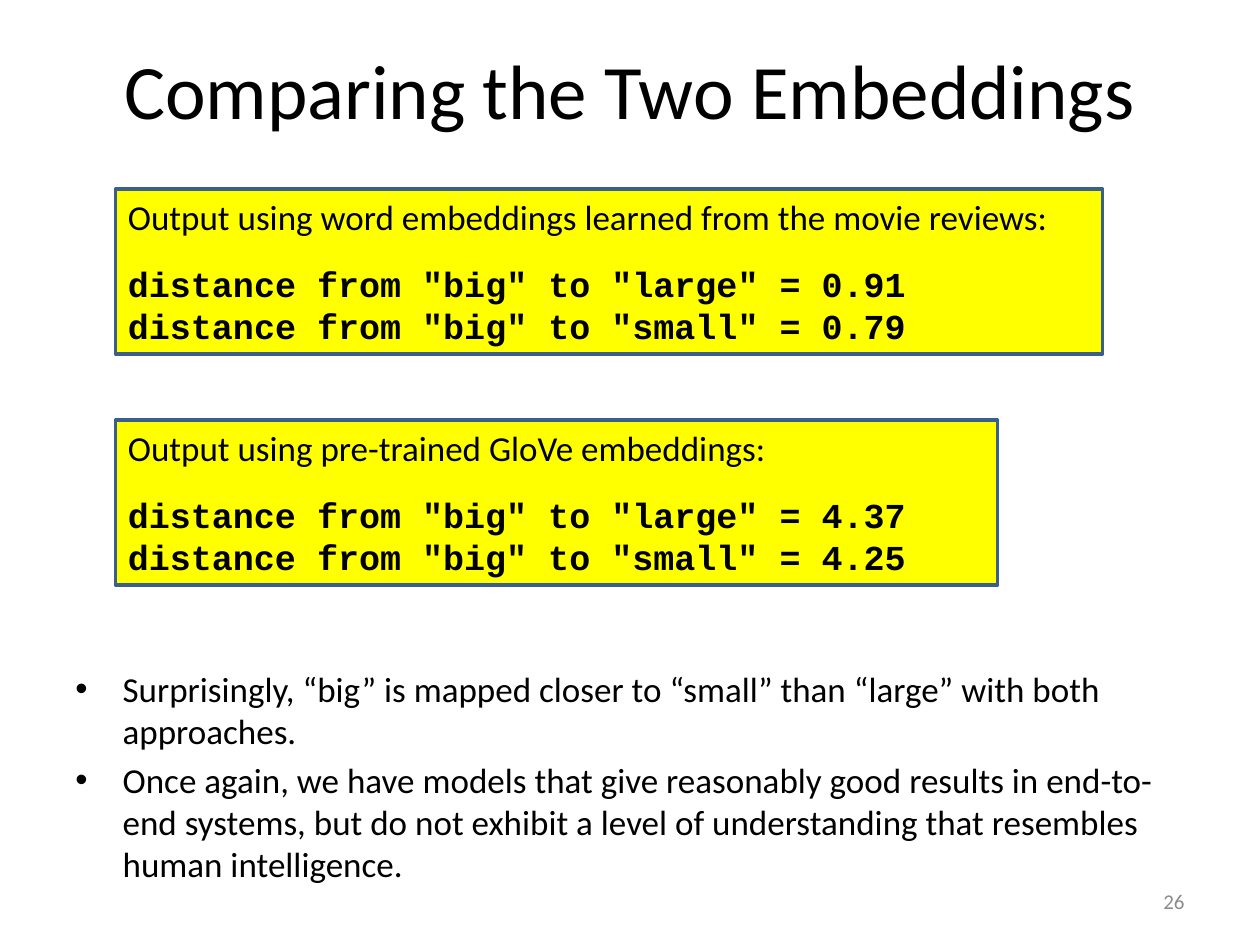
from dataclasses import dataclass

from lxml import etree
from pptx import Presentation
from pptx.dml.color import RGBColor
from pptx.enum.shapes import MSO_SHAPE
from pptx.enum.text import MSO_ANCHOR, MSO_AUTO_SIZE, PP_ALIGN
from pptx.oxml.ns import qn
from pptx.util import Pt

RECTANGLE = MSO_SHAPE.RECTANGLE
TOP, MIDDLE = MSO_ANCHOR.TOP, MSO_ANCHOR.MIDDLE
LEFT, CENTER, RIGHT = PP_ALIGN.LEFT, PP_ALIGN.CENTER, PP_ALIGN.RIGHT
GROW = MSO_AUTO_SIZE.SHAPE_TO_FIT_TEXT


@dataclass(frozen=True)
class Theme:
    sans: str = "Calibri"
    mono: str = "Courier New"
    text: RGBColor = RGBColor(0x00, 0x00, 0x00)
    muted: RGBColor = RGBColor(0x8C, 0x8C, 0x8C)
    panel: RGBColor = RGBColor(0xFF, 0xFF, 0x00)
    border: RGBColor = RGBColor(0x3A, 0x5F, 0x8C)
    title_size: float = 44
    body_size: float = 20
    number_size: float = 12


@dataclass(frozen=True)
class Box:
    left: float
    top: float
    width: float
    height: float

    def lengths(self):
        return Pt(self.left), Pt(self.top), Pt(self.width), Pt(self.height)


@dataclass(frozen=True)
class OutputPanel:
    box: Box
    heading: str
    distances: dict[str, str]


THEME = Theme()
HEADING_GAP = 14.65
BULLET_INDENT = 27

PANELS = [
    OutputPanel(Box(66, 108, 564, 94.3),
                "Output using word embeddings learned from the movie reviews:",
                {"large": "0.91", "small": "0.79"}),
    OutputPanel(Box(66, 240, 504, 94.3),
                "Output using pre-trained GloVe embeddings:",
                {"large": "4.37", "small": "4.25"}),
]

FINDINGS = [
    "Surprisingly, “big” is mapped closer to “small” than “large” with both approaches.",
    "Once again, we have models that give reasonably good results in end-to-end systems, "
    "but do not exhibit a level of understanding that resembles human intelligence.",
]


def write_lines(tf, lines: list[str], size: float, color=THEME.text, align=LEFT):
    """Fill a text frame, one paragraph a line, and return the paragraphs."""
    tf.word_wrap = True
    for i, line in enumerate(lines):
        p = tf.paragraphs[0] if i == 0 else tf.add_paragraph()
        p.text = line
        p.alignment = align
        p.font.name = THEME.sans
        p.font.size = Pt(size)
        p.font.color.rgb = color
    return tf.paragraphs


def add_text(s, box: Box, lines: list[str], size: float, anchor=MIDDLE, **style):
    tf = s.shapes.add_textbox(*box.lengths()).text_frame
    tf.vertical_anchor = anchor
    return write_lines(tf, lines, size, **style)


def add_bullet(p) -> None:
    p.space_before = Pt(THEME.body_size * 0.2)
    pPr = p._p.get_or_add_pPr()
    pPr.set("marL", str(Pt(BULLET_INDENT)))
    pPr.set("indent", str(-Pt(BULLET_INDENT)))
    font = etree.Element(qn("a:buFont"), typeface="Arial")
    char = etree.Element(qn("a:buChar"), char="•")
    # Bullet settings come before the default run properties
    defaults = pPr.find(qn("a:defRPr"))
    defaults.addprevious(font)
    defaults.addprevious(char)


def add_panel(s, panel: OutputPanel) -> None:
    sp = s.shapes.add_shape(RECTANGLE, *panel.box.lengths())
    sp.shadow.inherit = False
    sp.fill.solid()
    sp.fill.fore_color.rgb = THEME.panel
    sp.line.color.rgb = THEME.border
    sp.line.width = Pt(2)
    tf = sp.text_frame
    tf.vertical_anchor = TOP
    tf.auto_size = GROW
    results = [f'distance from "big" to "{word}" = {value}'
               for word, value in panel.distances.items()]
    heading, *rows = write_lines(tf, [panel.heading, *results], THEME.body_size)
    heading.space_after = Pt(HEADING_GAP)
    for p in rows:
        p.font.name = THEME.mono
        p.font.bold = True


def main() -> None:
    prs = Presentation()
    prs.slide_width, prs.slide_height = Pt(720), Pt(540)
    s = prs.slides.add_slide(prs.slide_layouts[6])

    # Title
    add_text(s, Box(36, 12, 648, 78), ["Comparing the Two Embeddings"],
             THEME.title_size, align=CENTER)

    # Findings
    for p in add_text(s, Box(36, 378, 648, 84), FINDINGS, THEME.body_size, anchor=TOP):
        add_bullet(p)

    # Slide number
    add_text(s, Box(516, 500.5, 168, 28.75), ["26"], THEME.number_size,
             color=THEME.muted, align=RIGHT)

    # Program output
    for panel in PANELS:
        add_panel(s, panel)

    prs.save("out.pptx")


if __name__ == "__main__":
    main()
